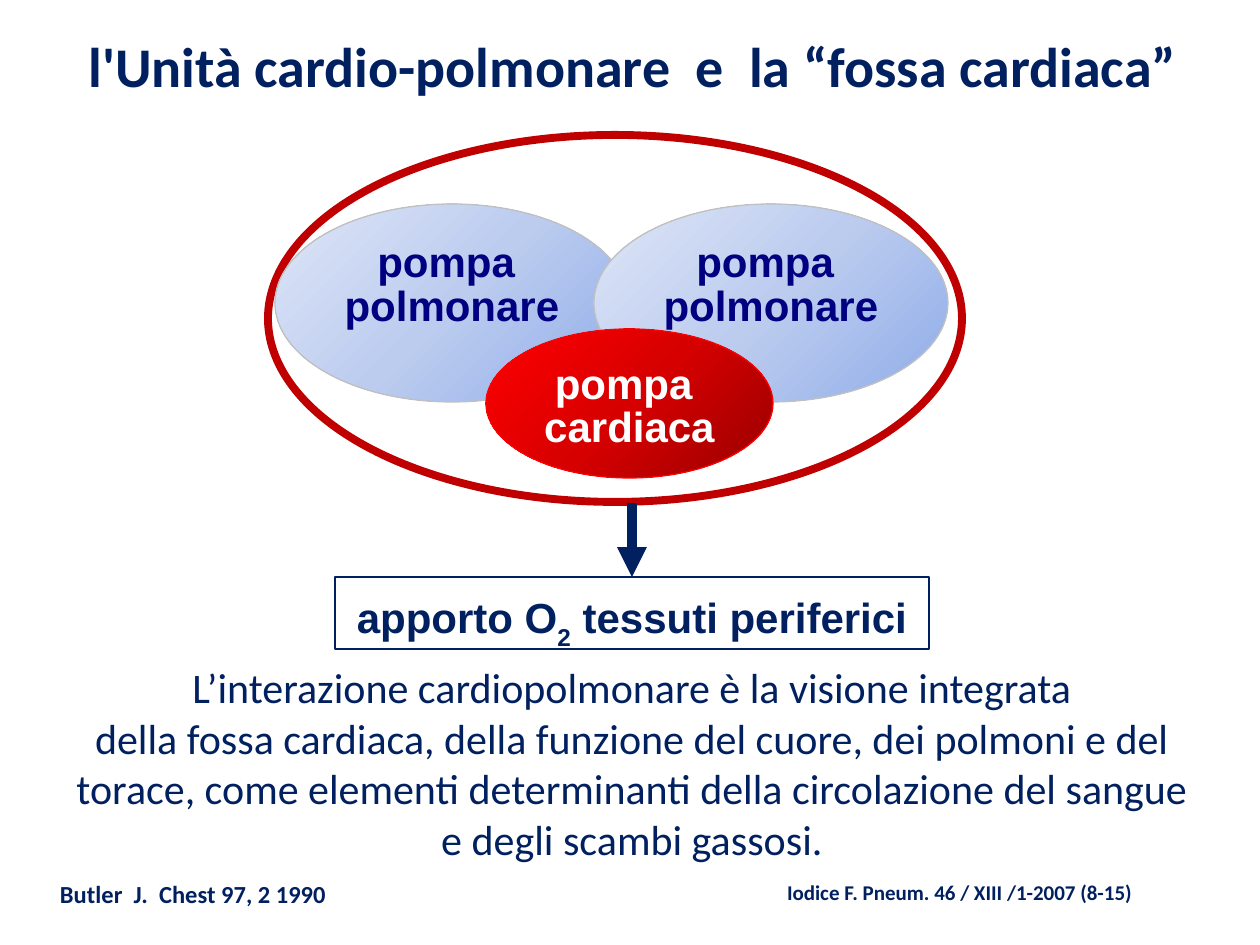
import copy

import pptx
import pptx.dml.color
import pptx.enum.shapes
import pptx.enum.text
import pptx.oxml
import pptx.oxml.ns
import pptx.util

UNIT = 914400 / 126
HUES = {
    "navy": "002060",
    "ink": "000080",
    "white": "FFFFFF",
    "ring": "C00000",
    "edge": "C0C0C0",
    "red": "FF0000",
}
LUNG = ("8FADE9", "BCCCEF", "DEE6F7")
HEART = ("970000", "D70000", "FF0000")
KIND = pptx.enum.shapes.MSO_SHAPE
ALIGN = pptx.enum.text.PP_ALIGN
ANCHOR = pptx.enum.text.MSO_ANCHOR


def px(size):
    return pptx.util.Emu(round(size * UNIT))


def rgb(code):
    return pptx.dml.color.RGBColor.from_string(code)


def apply(item, values):
    for name, value in values.items():
        setattr(item, name, value)


def style(line, hue, width):
    line.color.rgb = rgb(HUES[hue])
    line.width = pptx.util.Pt(width)


def write(shape, lines, hue="navy", size=24, face="Arial", bold=True,
          align=ALIGN.CENTER, space=0.87, inset=(13, 15, 13, 6),
          anchor=ANCHOR.TOP):
    frame = shape.text_frame
    left, top, right, foot = map(px, inset)
    apply(frame, {
        "word_wrap": True, "vertical_anchor": anchor,
        "margin_left": left, "margin_top": top,
        "margin_right": right, "margin_bottom": foot,
    })
    for index, line in enumerate(lines):
        para = frame.add_paragraph() if index else frame.paragraphs[0]
        apply(para, {"alignment": align, "line_spacing": space})
        for spot, text in enumerate(line.split("|")):
            run = para.add_run()
            run.text = text
            apply(run.font, {"size": pptx.util.Pt(size), "name": face,
                             "bold": bold})
            run.font.color.rgb = rgb(HUES[hue])
            if spot == 1:
                run._r.get_or_add_rPr().set("baseline", "-33000")


def shade(fill, shape, hues):
    fill.gradient()
    fill.gradient_angle = 135
    first = shape.element.spPr.find(".//" + pptx.oxml.ns.qn("a:gs"))
    first.addnext(copy.deepcopy(first))
    for index, (stop, hue) in enumerate(zip(fill.gradient_stops, hues)):
        stop.position = index / 2
        stop.color.rgb = rgb(hue)


def form(slide, kind, box, hue, width, hues=None):
    shape = slide.shapes.add_shape(kind, *map(px, box))
    shape.shadow.inherit = False
    style(shape.line, hue, width)
    if hues:
        shade(shape.fill, shape, hues)
    else:
        shape.fill.background()
    return shape


def label(slide, box, lines, **look):
    shape = slide.shapes.add_textbox(*map(px, box))
    write(shape, lines, face="Calibri", **look)


def arrow(slide, start, end, goal):
    kind = pptx.enum.shapes.MSO_CONNECTOR.STRAIGHT
    line = slide.shapes.add_connector(kind, *map(px, start + end))
    line.end_connect(goal, 0)
    style(line.line, "navy", 5.67)
    tail = pptx.oxml.parse_xml(
        f'<a:tailEnd {pptx.oxml.ns.nsdecls("a")} type="triangle"/>')
    line.line._get_or_add_ln().append(tail)
    line.element.spPr.append(pptx.oxml.parse_xml(
        f'<a:effectLst {pptx.oxml.ns.nsdecls("a")}/>'))


def main():
    deck = pptx.Presentation()
    apply(deck, {"slide_width": px(1260), "slide_height": px(945)})
    slide = deck.slides.add_slide(deck.slide_layouts[6])

    ring = form(slide, KIND.OVAL, (268, 135, 694, 367), "ring", 4.5)
    ring.fill.solid()
    ring.fill.fore_color.rgb = rgb(HUES["white"])
    for left in (275, 594):
        lung = form(slide, KIND.OVAL, (left, 204, 354, 198), "edge", 0.75, LUNG)
        write(lung, ["pompa ", "polmonare"], hue="ink",
              inset=(13, 15, 13, 48), anchor=ANCHOR.MIDDLE)
    heart = form(slide, KIND.OVAL, (486, 329, 287, 149), "red", 0.75, HEART)
    write(heart, ["pompa ", "cardiaca"], hue="white", anchor=ANCHOR.MIDDLE)

    label(slide, (62, 26, 1142, 101),
          ["l'Unità cardio-polmonare  e  la “fossa cardiaca”"], size=32)
    goal = form(slide, KIND.RECTANGLE, (335, 577, 594, 72), "navy", 0.75)
    write(goal, ["apporto O|2| tessuti periferici"], inset=(13, 14, 13, 6))
    arrow(slide, (632, 503), (632, 577), goal)

    label(slide, (774, 873, 472, 50),
          ["Iodice F. Pneum. 46 / XIII /1-2007 (8-15)"],
          size=12, align=ALIGN.LEFT, inset=(13, 10, 13, 6))
    plain = {"space": 1.0, "inset": (13, 6, 13, 6)}
    label(slide, (47, 656, 1170, 217), [
        "L’interazione cardiopolmonare è la visione integrata",
        "della fossa cardiaca, della funzione del cuore, dei polmoni e del "
        "torace, come elementi determinanti della circolazione del sangue",
        "e degli scambi gassosi.",
    ], bold=False, **plain)
    label(slide, (47, 873, 425, 43), ["Butler  J.  Chest 97, 2 1990"],
          size=14, align=ALIGN.LEFT, **plain)

    deck.save("out.pptx")


if __name__ == "__main__":
    main()
